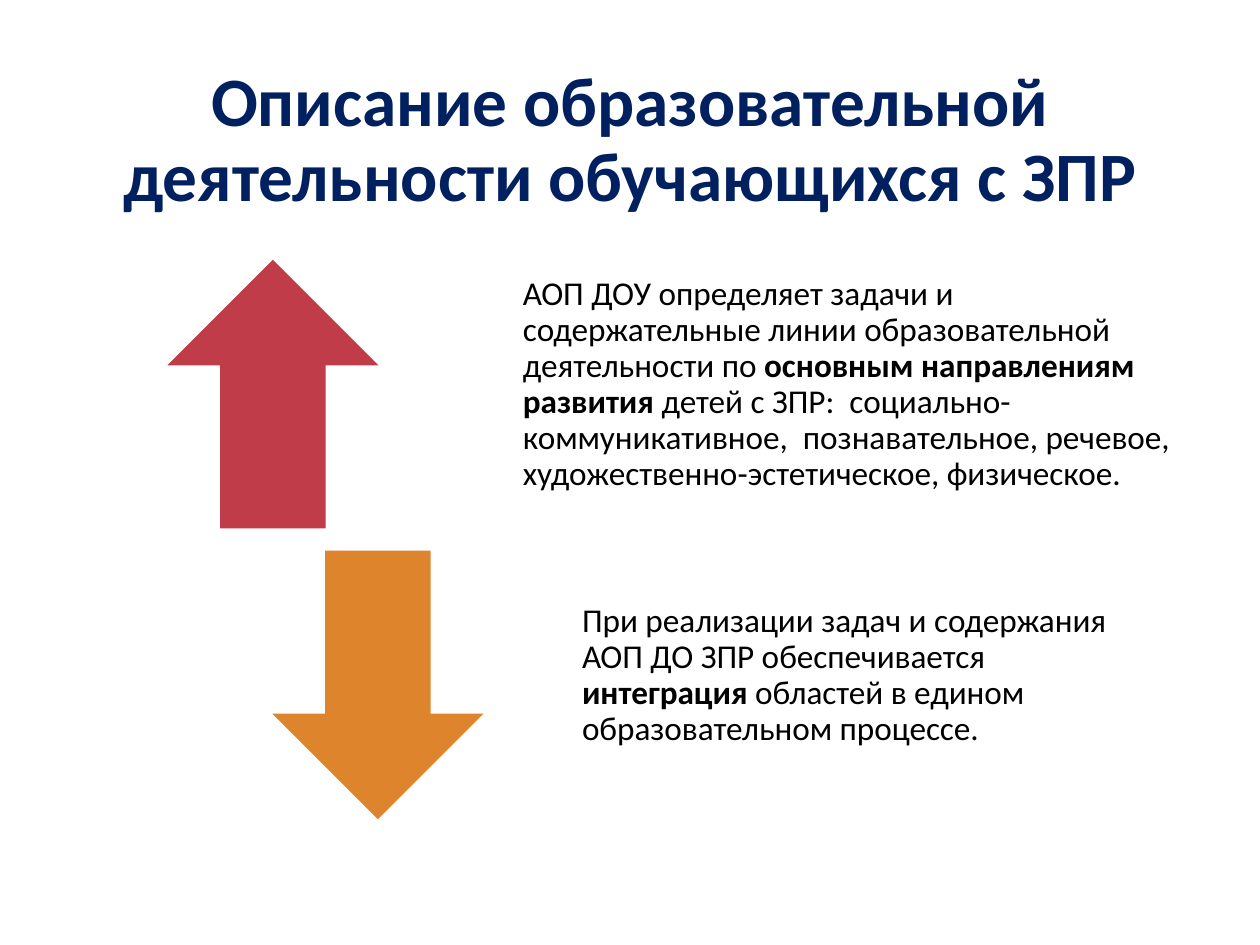
from dataclasses import dataclass

import pptx
import pptx.dml.color
import pptx.enum.shapes
import pptx.enum.text
import pptx.util

Pt = pptx.util.Pt
RGB = pptx.dml.color.RGBColor
Shape = pptx.enum.shapes.MSO_SHAPE
Align = pptx.enum.text.PP_ALIGN
Anchor = pptx.enum.text.MSO_ANCHOR


@dataclass(frozen=True)
class Theme:
    font: str = "Calibri"
    title_size: float = 39.6
    body_size: float = 19
    line_spacing: float = 0.9
    title: str = "002060"
    body: str = "000000"
    up: str = "BF3C48"
    down: str = "DD842C"


@dataclass(frozen=True)
class Box:
    left: float
    top: float
    width: float
    height: float

    def lengths(self) -> list:
        return [Pt(v) for v in (self.left, self.top, self.width, self.height)]


@dataclass(frozen=True)
class Run:
    text: str
    bold: bool = False


@dataclass(frozen=True)
class Direction:
    arrow: Shape
    color: str
    arrow_left: float
    text_left: float
    text_width: float
    runs: tuple[Run, ...]


THEME = Theme()
TITLE_BOX = Box(49.7, 28.8, 620.6, 104.4)
ROWS_TOP, ROW_HEIGHT, ROW_STEP, ARROW_WIDTH = 148.4, 153.5, 166.2, 120.7

DIRECTIONS = (
    Direction(Shape.UP_ARROW, THEME.up, 95.6, 288, 392.4, (
        Run("АОП ДОУ определяет задачи и содержательные линии "
            "образовательной деятельности по "),
        Run("основным направлениям развития ", True),
        Run("детей с ЗПР:  социально-коммуникативное,  познавательное, "
            "речевое, художественно-эстетическое, физическое."),
    )),
    Direction(Shape.DOWN_ARROW, THEME.down, 155.6, 321.8, 339.1, (
        Run("При реализации задач и содержания АОП ДО ЗПР обеспечивается "),
        Run("интеграция", True),
        Run(" областей в едином образовательном процессе."),
    )),
)


def add_text(s, box: Box, runs: tuple[Run, ...], size: float, color: str,
             align: Align, margins: tuple[float, float, float, float]) -> None:
    tf = s.shapes.add_textbox(*box.lengths()).text_frame
    sides = ("margin_left", "margin_top", "margin_right", "margin_bottom")
    frame = {"word_wrap": True, "vertical_anchor": Anchor.MIDDLE}
    frame.update(zip(sides, map(Pt, margins)))
    for name, value in frame.items():
        setattr(tf, name, value)
    p = tf.paragraphs[0]
    p.alignment, p.line_spacing = align, THEME.line_spacing
    for run in runs:
        r = p.add_run()
        r.text = run.text
        style = {"name": THEME.font, "size": Pt(size), "bold": run.bold}
        for name, value in style.items():
            setattr(r.font, name, value)
        r.font.color.rgb = RGB.from_string(color)


def add_arrow(s, kind: Shape, box: Box, color: str) -> None:
    arrow = s.shapes.add_shape(kind, *box.lengths())
    arrow.shadow.inherit = False
    arrow.fill.solid()
    arrow.fill.fore_color.rgb = RGB.from_string(color)
    arrow.line.fill.background()


def main() -> None:
    prs = pptx.Presentation()
    prs.slide_width, prs.slide_height = Pt(720), Pt(540)
    s = prs.slides.add_slide(prs.slide_layouts[6])

    # Title
    title = Run("Описание образовательной деятельности обучающихся с ЗПР", True)
    add_text(s, TITLE_BOX, (title,), THEME.title_size, THEME.title,
             Align.CENTER, (7.2, 3.6, 7.2, 3.6))

    # Arrows with their explanations
    for i, d in enumerate(DIRECTIONS):
        top = ROWS_TOP + i * ROW_STEP
        add_arrow(s, d.arrow, Box(d.arrow_left, top, ARROW_WIDTH, ROW_HEIGHT),
                  d.color)
        add_text(s, Box(d.text_left, top, d.text_width, ROW_HEIGHT), d.runs,
                 THEME.body_size, THEME.body, Align.LEFT, (10.8, 0, 10.8, 10.8))

    prs.save("out.pptx")


if __name__ == "__main__":
    main()
